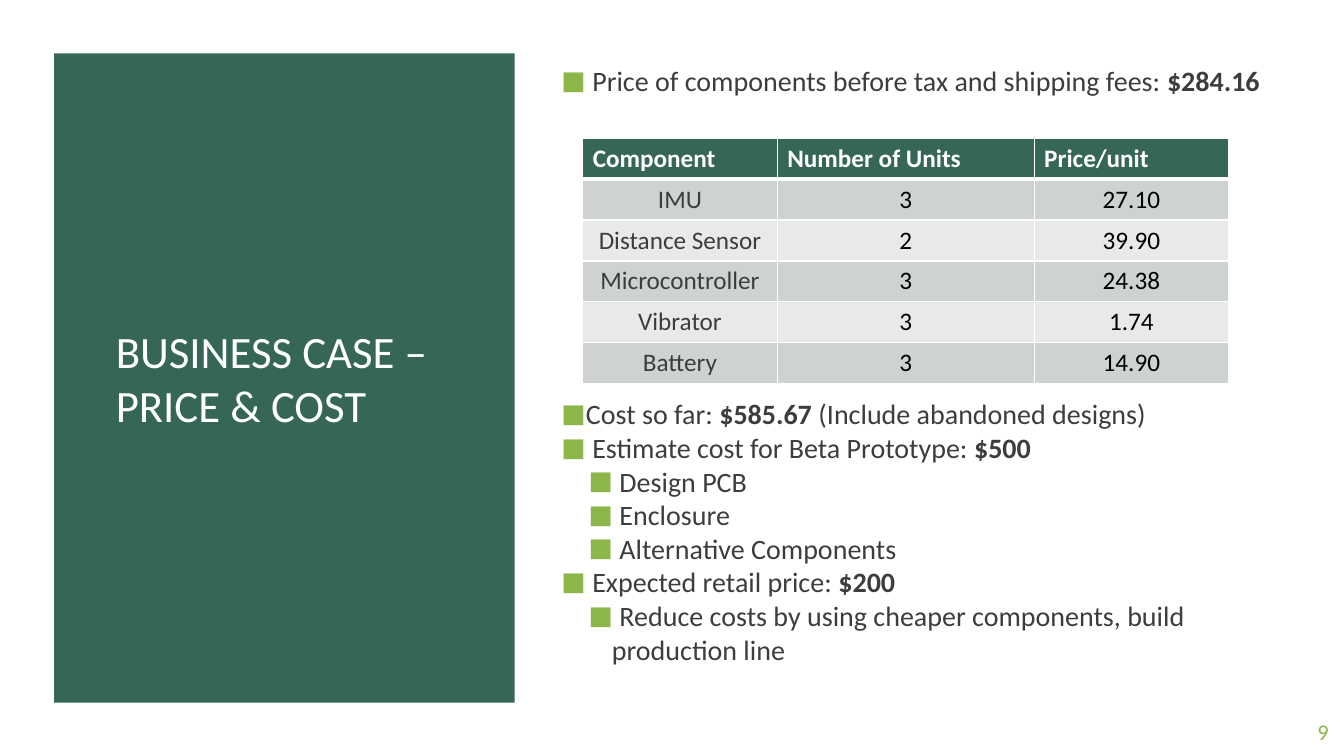
import pptx
import pptx.dml.color
import pptx.enum.shapes
import pptx.enum.text
import pptx.util
from lxml import etree

Pt = pptx.util.Pt
ALIGN = pptx.enum.text.PP_ALIGN
ANCHOR = pptx.enum.text.MSO_ANCHOR
NS = "http://schemas.openxmlformats.org/drawingml/2006/main"

WHITE, BLACK, GREEN, LIME, GREY = "FFFFFF", "000000", "366658", "8CB64A", "3D3D3D"
BANDS = ("CED3D1", "E8EAEA")


def rgb(color):
    return pptx.dml.color.RGBColor.from_string(color)


def add_run(p, text, size=20, color=GREY, bold=False, font="Calibri"):
    r = p.add_run()
    r.text = text
    r.font.name, r.font.size, r.font.bold = font, Pt(size), bold
    r.font.color.rgb = rgb(color)


def sub(parent, tag, **attrs):
    return etree.SubElement(parent, f"{{{NS}}}{tag}", **attrs)


class Deck:
    # Left margin and hanging indent of each bullet level
    LEVELS = ((10.6, 10.6), (36, 16.6))

    def __init__(self, width, height):
        self.prs = pptx.Presentation()
        self.prs.slide_width, self.prs.slide_height = Pt(width), Pt(height)
        self.slide = self.prs.slides.add_slide(self.prs.slide_layouts[6])

    def rect(self, x, y, w, h, color):
        sp = self.slide.shapes.add_shape(
            pptx.enum.shapes.MSO_SHAPE.RECTANGLE, Pt(x), Pt(y), Pt(w), Pt(h))
        sp.shadow.inherit = False
        sp.fill.solid()
        sp.fill.fore_color.rgb = rgb(color)
        sp.line.fill.background()

    def frame(self, x, y, w, h, anchor=ANCHOR.MIDDLE):
        tf = self.slide.shapes.add_textbox(Pt(x), Pt(y), Pt(w), Pt(h)).text_frame
        tf.word_wrap = True
        tf.vertical_anchor = anchor
        return tf

    def text(self, x, y, w, h, text, align=ALIGN.LEFT, **fmt):
        p = self.frame(x, y, w, h).paragraphs[0]
        p.alignment = align
        add_run(p, text, **fmt)

    def bullets(self, x, y, w, h, items):
        """Each item is a level and its text; ** switches bold on and off."""
        tf = self.frame(x, y, w, h, ANCHOR.TOP)
        tf.margin_top = tf.margin_bottom = 0
        for i, (level, text) in enumerate(items):
            p = tf.add_paragraph() if i else tf.paragraphs[0]
            p.level = level
            p.line_spacing = Pt(24)
            margin, hang = self.LEVELS[level]
            pPr = p._p.get_or_add_pPr()
            pPr.set("marL", str(int(Pt(margin))))
            pPr.set("indent", str(-int(Pt(hang))))
            sub(sub(pPr, "buClr"), "srgbClr", val=LIME)
            sub(pPr, "buSzPct", val="92000")
            sub(pPr, "buFont", typeface="Calibri")
            sub(pPr, "buChar", char="■")
            for n, part in enumerate(text.split("**")):
                if part:
                    add_run(p, part, bold=n % 2 == 1)

    def borders(self, cell, bottom):
        tcPr = cell._tc.get_or_add_tcPr()
        for side in "LRTB":
            width = bottom if side == "B" else 1
            ln = sub(tcPr, "ln" + side, w=str(int(Pt(width))))
            sub(sub(ln, "solidFill"), "srgbClr", val=WHITE)

    def table(self, x, y, widths, row_height, rows):
        tbl = self.slide.shapes.add_table(
            len(rows), len(widths), Pt(x), Pt(y),
            Pt(sum(widths)), Pt(row_height * len(rows))).table
        for col, width in zip(tbl.columns, widths):
            col.width = Pt(width)
        for i, row in enumerate(rows):
            tbl.rows[i].height = Pt(row_height)
            head = i == 0
            for j, text in enumerate(row):
                cell = tbl.cell(i, j)
                self.borders(cell, bottom=3 if head else 1)
                cell.fill.solid()
                cell.fill.fore_color.rgb = rgb(GREEN if head else BANDS[(i - 1) % 2])
                p = cell.text_frame.paragraphs[0]
                p.alignment = ALIGN.LEFT if head else ALIGN.CENTER
                color = WHITE if head else BLACK if j else GREY
                add_run(p, text, size=18, color=color, bold=head)


def main():
    deck = Deck(960, 540)

    # Background and title panel
    deck.rect(0, 0, 960, 540, WHITE)
    deck.rect(38.6, 38.2, 329, 463.6, GREEN)
    deck.text(75.6, 87.8, 257.8, 364.3, "BUSINESS CASE – PRICE & COST",
              size=32, color=WHITE)

    # Component prices
    left, width = 394, 528
    deck.bullets(left, 45.6, width, 24, [
        (0, " Price of components before tax and shipping fees: **$284.16**")])
    deck.table(416.2, 98.8, (139, 183.5, 139), 29.2, [
        ("Component", "Number of Units", "Price/unit"),
        ("IMU", "3", "27.10"),
        ("Distance Sensor", "2", "39.90"),
        ("Microcontroller", "3", "24.38"),
        ("Vibrator", "3", "1.74"),
        ("Battery", "3", "14.90"),
    ])

    # Costs and retail price
    deck.bullets(left, 283.5, width, 192, [
        (0, "Cost so far: **$585.67 **(Include abandoned designs)"),
        (0, " Estimate cost for Beta Prototype: **$500**"),
        (1, " Design PCB"),
        (1, " Enclosure"),
        (1, " Alternative Components"),
        (0, " Expected retail price:** $200**"),
        (1, " Reduce costs by using cheaper components, build production line"),
    ])

    # Slide number
    deck.text(873.4, 508.3, 82.8, 28.8, "9", align=ALIGN.RIGHT, size=16, color=LIME)

    deck.prs.save("out.pptx")


if __name__ == "__main__":
    main()
